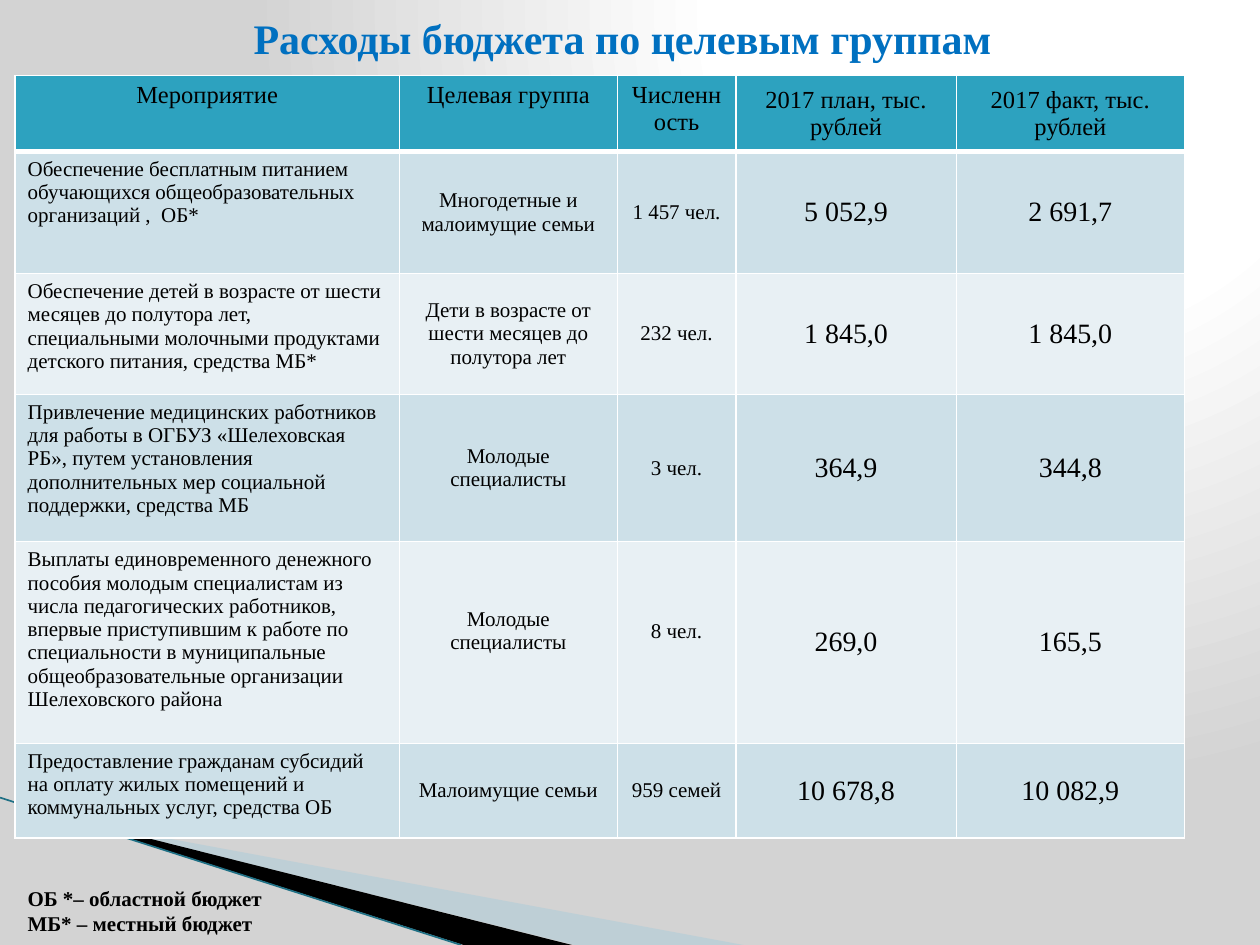
"""Build the slide on budget spending by target group."""
from dataclasses import dataclass

import lxml.etree
import pptx
import pptx.dml.color
import pptx.enum.shapes
import pptx.enum.text
import pptx.oxml
import pptx.oxml.ns
import pptx.util

ALIGN = pptx.enum.text.PP_ALIGN
ANCHOR = pptx.enum.text.MSO_ANCHOR
qn = pptx.oxml.ns.qn
NS = pptx.oxml.ns.nsdecls("a")


@dataclass(frozen=True)
class Theme:
    font: str = "Times New Roman"
    ink: str = "000000"
    title: str = "0070C0"
    header: str = "2DA2BF"
    bands: tuple = ("CDE0E8", "E8F0F4")
    border: str = "FFFFFF"
    wedge: str = "A0CBDC"
    line: str = "1F7085"
    glow: tuple = ((0, "FFFFFF"), (40, "FFFFFF"), (100, "D3D3D3"))
    title_size: int = 24
    header_size: int = 14
    body_size: int = 12
    figure_size: int = 16


THEME = Theme()
HEADER = ["Мероприятие", "Целевая группа", "Численность",
          "2017 план, тыс. рублей", "2017 факт, тыс. рублей"]
MEASURES = [
    ["Обеспечение бесплатным питанием обучающихся общеобразовательных организаций ,  ОБ*",
     "Многодетные и малоимущие семьи", "1 457 чел.", "5 052,9", "2 691,7"],
    ["Обеспечение детей в возрасте от шести месяцев до полутора лет, специальными "
     "молочными продуктами детского питания, средства МБ*",
     "Дети в возрасте от шести месяцев до полутора лет", "232 чел.", "1 845,0", "1 845,0"],
    ["Привлечение медицинских работников для работы в ОГБУЗ «Шелеховская РБ», путем "
     "установления дополнительных мер социальной поддержки, средства МБ",
     "Молодые специалисты", "3 чел.", "364,9", "344,8"],
    ["Выплаты единовременного денежного пособия молодым специалистам из числа "
     "педагогических работников, впервые приступившим к работе по специальности в "
     "муниципальные общеобразовательные организации Шелеховского района",
     "Молодые специалисты", "8 чел.", "269,0", "165,5"],
    ["Предоставление гражданам субсидий на оплату жилых помещений и коммунальных "
     "услуг, средства ОБ",
     "Малоимущие семьи", "959 семей", "10 678,8", "10 082,9"],
]


def rgb(value):
    return pptx.dml.color.RGBColor.from_string(value)


def write(tf, text, size=THEME.body_size, color=THEME.ink, bold=False, align=ALIGN.LEFT):
    for i, line in enumerate(text.split("\n")):
        p = tf.add_paragraph() if i else tf.paragraphs[0]
        p.alignment = align
        r = p.add_run()
        r.text = line
        r.font.name, r.font.size, r.font.bold = THEME.font, pptx.util.Pt(size), bold
        r.font.color.rgb = rgb(color)


class Deck:
    """Draws on a slide whose grid has 100 columns and 75 rows."""

    def __init__(self, theme):
        self.theme = theme
        self.prs = pptx.Presentation()
        self.prs.slide_width = pptx.util.Inches(10)
        self.prs.slide_height = pptx.util.Inches(7.5)
        self.unit = self.prs.slide_width / 100
        self.s = self.prs.slides.add_slide(self.prs.slide_layouts[6])

    def at(self, *lengths):
        return [round(n * self.unit) for n in lengths]

    def background(self):
        self.s.background.fill.gradient()
        grad = next(self.s.element.iter(qn("a:gradFill")))
        stops = "".join(f'<a:gs pos="{pos * 1000}"><a:srgbClr val="{color}"/></a:gs>'
                        for pos, color in self.theme.glow)
        grad.getparent().replace(grad, pptx.oxml.parse_xml(
            f'<a:gradFill {NS} rotWithShape="1"><a:gsLst>{stops}</a:gsLst>'
            '<a:path path="circle"><a:fillToRect l="65000" t="0" r="0" b="98000"/>'
            '</a:path></a:gradFill>'))

    def wedge(self, points, color, opacity=100):
        start, *rest = [tuple(self.at(*point)) for point in points]
        builder = self.s.shapes.build_freeform(*start)
        builder.add_line_segments(rest, close=True)
        sp = builder.convert_to_shape()
        sp.shadow.inherit = False
        sp.fill.solid()
        sp.fill.fore_color.rgb = rgb(color)
        sp.line.fill.background()
        if opacity < 100:
            clr = next(sp.element.spPr.iter(qn("a:srgbClr")))
            lxml.etree.SubElement(clr, qn("a:alpha")).set("val", str(opacity * 1000))

    def line(self, start, end, color, width):
        cx = self.s.shapes.add_connector(
            pptx.enum.shapes.MSO_CONNECTOR.STRAIGHT, *self.at(*start, *end))
        cx.line.color.rgb = rgb(color)
        cx.line.width = pptx.util.Pt(width)
        lxml.etree.SubElement(cx.element.spPr, qn("a:effectLst"))

    def text(self, box, text, **style):
        tf = self.s.shapes.add_textbox(*self.at(*box)).text_frame
        tf.word_wrap = True
        tf.vertical_anchor = ANCHOR.MIDDLE
        write(tf, text, **style)

    def cell(self, cell, text, fill, top=1, bottom=1, middle=True, **style):
        cell.fill.solid()
        cell.fill.fore_color.rgb = rgb(fill)
        cell.vertical_anchor = ANCHOR.MIDDLE if middle else ANCHOR.TOP
        write(cell.text_frame, text, **style)
        widths = {"lnL": 1, "lnR": 1, "lnT": top, "lnB": bottom}
        for i, (side, width) in enumerate(widths.items()):
            cell._tc.get_or_add_tcPr().insert(i, pptx.oxml.parse_xml(
                f'<a:{side} {NS} w="{pptx.util.Pt(width)}"><a:solidFill>'
                f'<a:srgbClr val="{self.theme.border}"/></a:solidFill></a:{side}>'))

    def table(self, left, top, cols, rows):
        t = self.theme
        table = self.s.shapes.add_table(
            len(rows), len(cols), *self.at(left, top, sum(cols), sum(rows))).table
        table.first_row = table.horz_banding = False
        for col, width in zip(table.columns, self.at(*cols)):
            col.width = width
        for row, height in zip(table.rows, self.at(*rows)):
            row.height = height
        for c, text in enumerate(HEADER):
            self.cell(table.cell(0, c), text, t.header, bottom=3, middle=c > 2,
                      size=t.header_size, align=ALIGN.CENTER)
        for n, measure in enumerate(MEASURES, 1):
            for c, text in enumerate(measure):
                self.cell(table.cell(n, c), text, t.bands[(n - 1) % 2],
                          top=3 if n == 1 else 1, middle=c > 0,
                          size=t.figure_size if c > 2 else t.body_size,
                          align=ALIGN.CENTER if c else ALIGN.LEFT)
        for c in (1, 2):
            table.cell(4, c).margin_bottom = pptx.util.Inches(0.23)


def main():
    deck = Deck(THEME)
    deck.background()
    deck.wedge([(5.5, 65.1), (59, 75), (45.6, 75), (5.5, 65)], THEME.wedge, opacity=40)
    deck.wedge([(5.3, 64.9), (45.4, 75), (36.8, 75), (5.4, 65)], THEME.ink)
    deck.line((0, 63.3), (36.6, 75), THEME.line, 0.95)
    deck.text((1.3, 0, 96.2, 6), "Расходы бюджета по целевым группам",
              size=THEME.title_size, color=THEME.title, bold=True, align=ALIGN.CENTER)
    deck.table(1.2, 6, cols=[30.5, 17.3, 9.4, 17.5, 18.1],
               rows=[6, 9.7, 9.6, 11.7, 16, 7.5])
    deck.text((1.2, 69.5, 96.2, 5.5), "ОБ *– областной бюджет\nМБ* – местный бюджет",
              bold=True)
    deck.prs.save("out.pptx")


if __name__ == "__main__":
    main()
